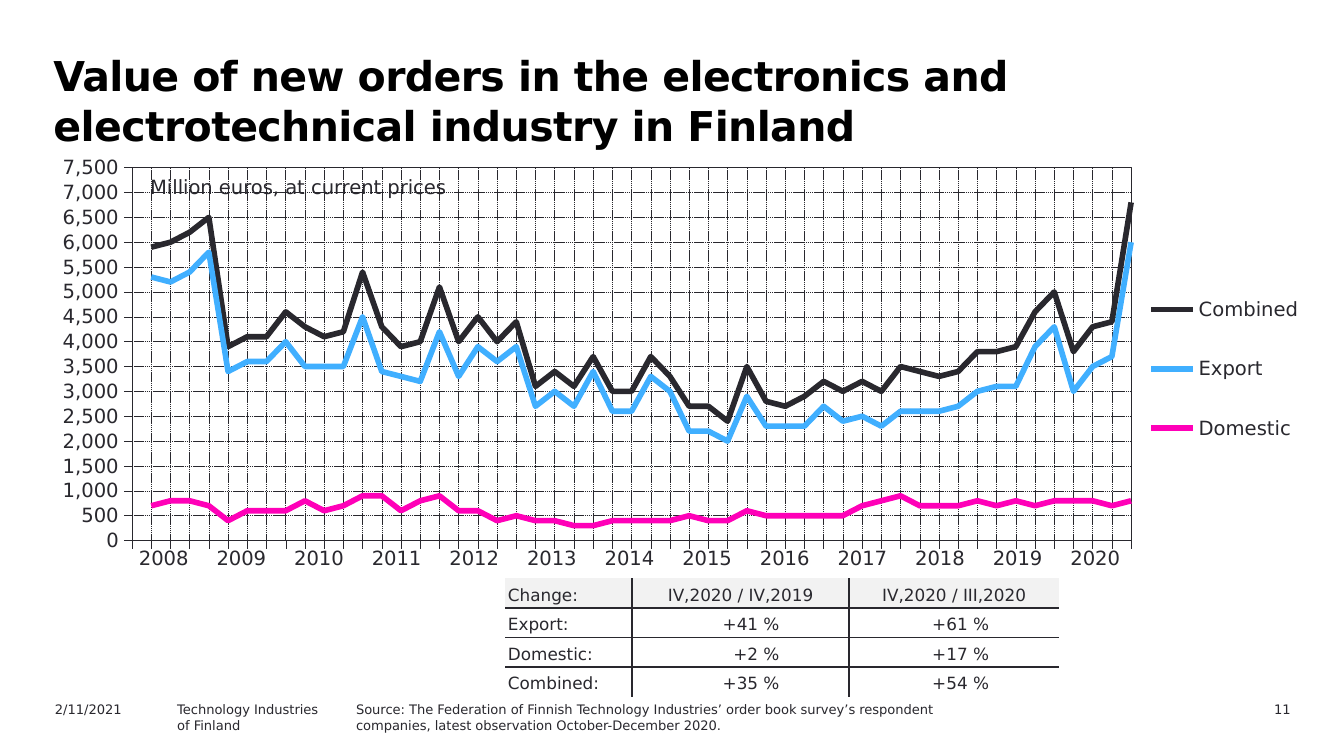
from lxml import etree
from pptx import Presentation
from pptx.chart.data import CategoryChartData
from pptx.dml.color import RGBColor
from pptx.enum.chart import XL_CHART_TYPE, XL_LEGEND_POSITION, XL_TICK_LABEL_POSITION, XL_TICK_MARK
from pptx.enum.dml import MSO_LINE
from pptx.enum.text import MSO_ANCHOR, PP_ALIGN
from pptx.oxml.ns import qn
from pptx.util import Cm, Pt

LEFT, CENTER, RIGHT = PP_ALIGN.LEFT, PP_ALIGN.CENTER, PP_ALIGN.RIGHT
TOP, BOTTOM = MSO_ANCHOR.TOP, MSO_ANCHOR.BOTTOM
OUTSIDE = XL_TICK_MARK.OUTSIDE
FONT = "DejaVu Sans"
NO_STYLE = "{2D5ABB26-0587-4C30-8999-92F81FD0307C}"
COLORS = {"title": "000000", "ink": "29282E", "head": "F2F2F2",
          "Combined": "29282E", "Export": "40AFFF", "Domestic": "FF00B8"}

# Content
TITLE = "Value of new orders in the electronics and electrotechnical industry in Finland"
UNIT = "Million euros, at current prices"
YEARS = range(2008, 2021)
SERIES = {  # hundreds of million euros by quarter, from the first quarter of 2008
    "Combined": [59, 60, 62, 65, 39, 41, 41, 46, 43, 41, 42, 54, 43, 39, 40, 51, 40, 45,
                 40, 44, 31, 34, 31, 37, 30, 30, 37, 33, 27, 27, 24, 35, 28, 27, 29, 32,
                 30, 32, 30, 35, 34, 33, 34, 38, 38, 39, 46, 50, 38, 43, 44, 68],
    "Export": [53, 52, 54, 58, 34, 36, 36, 40, 35, 35, 35, 45, 34, 33, 32, 42, 33, 39,
               36, 39, 27, 30, 27, 34, 26, 26, 33, 30, 22, 22, 20, 29, 23, 23, 23, 27,
               24, 25, 23, 26, 26, 26, 27, 30, 31, 31, 39, 43, 30, 35, 37, 60],
    "Domestic": [7, 8, 8, 7, 4, 6, 6, 6, 8, 6, 7, 9, 9, 6, 8, 9, 6, 6,
                 4, 5, 4, 4, 3, 3, 4, 4, 4, 4, 5, 4, 4, 6, 5, 5, 5, 5,
                 5, 7, 8, 9, 7, 7, 7, 8, 7, 8, 7, 8, 8, 8, 7, 8],
}
CHANGES = [
    ("Change:", "IV,2020 / IV,2019", "IV,2020 / III,2020"),
    ("Export:", "+41 %", "+61 %"),
    ("Domestic:", "+2 %", "+17 %"),
    ("Combined:", "+35 %", "+54 %"),
]
FOOTER = [  # left, width (cm), alignment, lines
    (22.25, 2.39, RIGHT, ["11"]),
    (6.48, 12.88, LEFT, ["Source: The Federation of Finnish Technology Industries’ order book "
                         "survey’s respondent companies, latest observation October-December 2020."]),
    (3.1, 4.57, LEFT, ["Technology Industries", "of Finland"]),
    (0.79, 2.54, LEFT, ["2/11/2021"]),
]


def rgb(name):
    return RGBColor.from_string(COLORS[name])


def set_font(font, size, color="ink", bold=False):
    font.name, font.size, font.bold = FONT, Pt(size), bold
    font.color.rgb = rgb(color)


def add_text(x, y, w, h, lines, size, align=LEFT, wrap=True):
    tf = s.shapes.add_textbox(Cm(x), Cm(y), Cm(w), Cm(h)).text_frame
    tf.word_wrap = wrap
    tf.text = "\n".join(lines)
    for p in tf.paragraphs:
        p.alignment = align
        set_font(p.font, size)


def add_plain_table(x, y, widths, row_height, rows):
    frame = s.shapes.add_table(len(rows), len(widths), Cm(x), Cm(y),
                               Cm(sum(widths)), Cm(row_height * len(rows)))
    table = frame.table
    table.first_row = table.horz_banding = False
    table._tbl.tblPr.find(qn("a:tableStyleId")).text = NO_STYLE
    for column, width in zip(table.columns, widths):
        column.width = Cm(width)
    for i, values in enumerate(rows):
        table.rows[i].height = Cm(row_height)
        for j, value in enumerate(values):
            table.cell(i, j).text = str(value)
            table.cell(i, j).fill.background()
    return table


def add_border(cell, index, side):
    ln = etree.Element(qn("a:" + side), w=str(Pt(1)))
    fill = etree.SubElement(ln, qn("a:solidFill"))
    etree.SubElement(fill, qn("a:srgbClr"), val=COLORS["ink"])
    cell._tc.get_or_add_tcPr().insert(index, ln)


def make_layout(x, y, w, h, inner=False):
    layout = etree.Element(qn("c:layout"))
    manual = etree.SubElement(layout, qn("c:manualLayout"))
    items = [("layoutTarget", "inner")] if inner else []
    items += [("xMode", "edge"), ("yMode", "edge"), ("x", x), ("y", y), ("w", w), ("h", h)]
    for tag, value in items:
        etree.SubElement(manual, qn("c:" + tag), val=str(value))
    return layout


def drop(parent, tag):
    for child in parent.findall(qn(tag)):
        parent.remove(child)


prs = Presentation()
prs.slide_width, prs.slide_height = Cm(25.4), Cm(14.28)
s = prs.slides.add_slide(prs.slide_layouts[5])

# Title
title = s.shapes.title
title.left, title.top, title.width, title.height = Cm(0.71), Cm(0.96), Cm(22.2), Cm(1.95)
tf = title.text_frame
tf.text = TITLE
tf.word_wrap, tf.vertical_anchor = True, TOP
tf.margin_left, tf.margin_top, tf.margin_bottom = Cm(0.3), 0, 0
p = tf.paragraphs[0]
p.alignment = LEFT
set_font(p.font, 22, "title", True)
p.runs[0]._r.get_or_add_rPr().set("spc", "-30")

# Line chart, with one empty position before the first quarter
data = CategoryChartData(number_format="#,##0")
data.categories = [str(n) for n in range(1, len(SERIES["Combined"]) + 2)]
for name, hundreds in SERIES.items():
    data.add_series(name, [None] + [v * 100 for v in hundreds])
chart = s.shapes.add_chart(XL_CHART_TYPE.LINE, Cm(0.51), Cm(2.82), Cm(24.21), Cm(8.46), data).chart
chart.has_title = False
set_font(chart.font, 10.5)
for series in chart.plots[0].series:
    series.smooth = False
    series.format.line.width = Pt(3)
    series.format.line.color.rgb = rgb(series.name)
chart.plots[0].vary_by_categories = False

# Axes
for axis in (chart.category_axis, chart.value_axis):
    axis.major_tick_mark = OUTSIDE
    axis.has_major_gridlines = True
    axis.format.line.width = Pt(0.22)
    axis.format.line.color.rgb = rgb("ink")
    grid = axis.major_gridlines.format.line
    grid.width, grid.dash_style = Pt(0.25), MSO_LINE.SQUARE_DOT
    grid.color.rgb = rgb("ink")
chart.category_axis.tick_label_position = XL_TICK_LABEL_POSITION.NONE
axis = chart.value_axis
axis.minimum_scale, axis.maximum_scale, axis.major_unit = 0, 7500, 500
axis.tick_labels.number_format, axis.tick_labels.number_format_is_linked = "#,##0", False
val_ax = axis._element
drop(val_ax, "c:crossBetween")
val_ax.find(qn("c:crosses")).addnext(etree.Element(qn("c:crossBetween"), val="midCat"))

# Plot frame and legend
plot_area = val_ax.getparent()
drop(plot_area, "c:layout")
plot_area.insert(0, make_layout(0.082, 0.041, 0.78, 0.833, inner=True))
sp_pr = etree.SubElement(plot_area, qn("c:spPr"))
etree.SubElement(sp_pr, qn("a:noFill"))
ln = etree.SubElement(sp_pr, qn("a:ln"), w=str(Pt(0.5)))
fill = etree.SubElement(ln, qn("a:solidFill"))
etree.SubElement(fill, qn("a:srgbClr"), val=COLORS["ink"])
chart.has_legend = True
chart.legend.position = XL_LEGEND_POSITION.RIGHT
chart.legend.include_in_layout = False
set_font(chart.legend.font, 10.5)
legend = chart.legend._element
drop(legend, "c:layout")
legend.find(qn("c:legendPos")).addnext(make_layout(0.87, 0.25, 0.13, 0.48))

# Year labels under the chart
years = add_plain_table(2.36, 10.21, [19.08 / len(YEARS)] * len(YEARS), 0.79, [YEARS])
for cell in years.iter_cells():
    p = cell.text_frame.paragraphs[0]
    p.alignment = CENTER
    set_font(p.font, 10.5)

add_text(2.59, 3.18, 6.2, 0.69, [UNIT], 10.5, wrap=False)

# Change table, ruled between its cells only
changes = add_plain_table(9.55, 10.92, [2.39, 4.11, 3.96], 0.56, CHANGES)
last_row, last_col = len(CHANGES) - 1, len(CHANGES[0]) - 1
for i in range(last_row + 1):
    for j in range(last_col + 1):
        cell = changes.cell(i, j)
        cell.vertical_anchor = BOTTOM
        cell.margin_left = cell.margin_right = cell.margin_top = cell.margin_bottom = Cm(0.05)
        p = cell.text_frame.paragraphs[0]
        set_font(p.font, 9)
        if i == 0:
            cell.fill.solid()
            cell.fill.fore_color.rgb = rgb("head")
        if j > 0:
            p.alignment = RIGHT if i else CENTER
            cell.margin_right = Cm(1.32 if i else 0.05)
        sides = [("lnL", j > 0), ("lnR", j < last_col), ("lnT", i > 0), ("lnB", i < last_row)]
        for index, side in enumerate(name for name, ruled in sides if ruled):
            add_border(cell, index, side)

# Footer
for x, w, align, lines in FOOTER:
    add_text(x, 13.13, w, 0.46, lines, 7, align)

prs.save("out.pptx")
